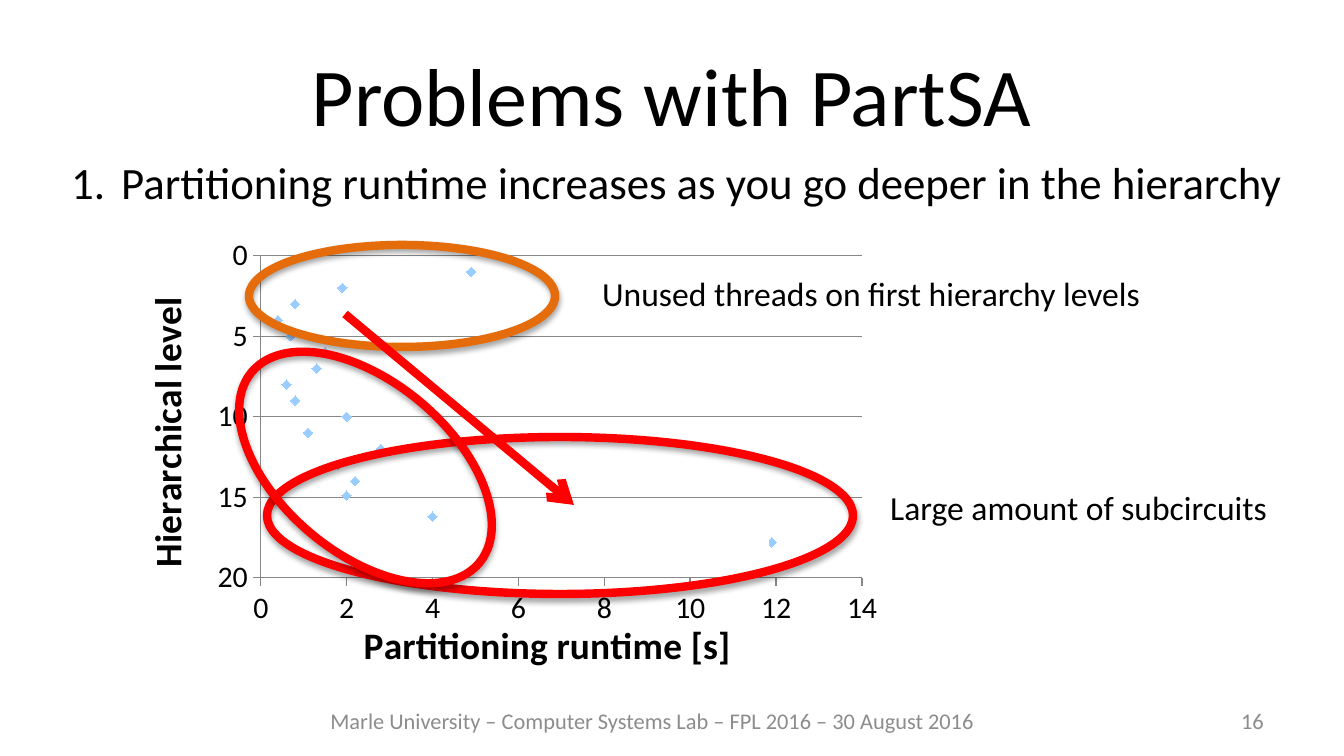
from lxml import etree
from pptx import Presentation
from pptx.chart.data import XyChartData
from pptx.dml.color import RGBColor
from pptx.enum.chart import XL_AXIS_CROSSES as Crosses, XL_CHART_TYPE as ChartType
from pptx.enum.chart import XL_MARKER_STYLE as Marker, XL_TICK_MARK as Tick
from pptx.enum.shapes import MSO_CONNECTOR as Connector, MSO_SHAPE as Shape
from pptx.enum.text import MSO_ANCHOR as Anchor, PP_ALIGN as Align
from pptx.oxml import parse_xml
from pptx.oxml.ns import nsdecls, qn
from pptx.util import Pt

SCALE = 914400 / 134.4  # EMU per px
COLORS = {"text": "000000", "muted": "8C8C8C", "white": "FFFFFF", "grid": "878787",
          "marker": "99CCFF", "orange": "E46C0A", "red": "FF0000"}
FONT = "Calibri"


def px(*lengths):
    return [round(length * SCALE) for length in lengths]


def rgb(name):
    return RGBColor.from_string(COLORS[name])


deck = Presentation()
deck.slide_width, deck.slide_height = px(1344, 756)
page = deck.slides.add_slide(deck.slide_layouts[6])

# Scatter chart: runtime against hierarchy level
runtimes = [4.9, 1.9, 0.8, 0.4, 0.7, 1.5, 1.3, 0.6, 0.8, 2, 1.1, 2.8, 1.8, 2.2, 2, 4, 6.7, 11.9]
levels = list(range(1, 15)) + [14.9, 16.2, 16.8, 17.8]
data = XyChartData()
points = data.add_series("Series 1")
for runtime, level in zip(runtimes, levels):
    points.add_data_point(runtime, level)
chart = page.shapes.add_chart(ChartType.XY_SCATTER, *px(129, 231, 766, 450), data).chart
chart.has_legend = chart.has_title = False
chart.font.name, chart.font.size = FONT, Pt(16)
chart.font.color.rgb = rgb("text")
chart.plots[0].vary_by_categories = False

series = chart.plots[0].series[0]
series.smooth = False
series.format.line.fill.background()
series.marker.style, series.marker.size = Marker.DIAMOND, 5
series.marker.format.fill.solid()
series.marker.format.fill.fore_color.rgb = rgb("marker")
series.marker.format.line.fill.background()

for axis, title, top, step in [(chart.category_axis, "Partitioning runtime [s]", 14, 2),
                               (chart.value_axis, "Hierarchical level", 20, 5)]:
    settings = {"minimum_scale": 0, "maximum_scale": top, "major_unit": step,
                "major_tick_mark": Tick.OUTSIDE, "minor_tick_mark": Tick.NONE}
    for name, value in settings.items():
        setattr(axis, name, value)
    axis.tick_labels.number_format = "General"
    axis.tick_labels.number_format_is_linked = False
    axis.format.line.color.rgb = rgb("grid")
    axis.format.line.width = Pt(0.75)
    frame = axis.axis_title.text_frame
    frame.text = title
    font = frame.paragraphs[0].runs[0].font
    font.name, font.size, font.bold = FONT, Pt(20), True
    font.color.rgb = rgb("text")
chart.category_axis.has_major_gridlines = False
value_axis = chart.value_axis
value_axis.reverse_order = True
value_axis.crosses = Crosses.MAXIMUM
value_axis.major_gridlines.format.line.color.rgb = rgb("grid")
value_axis.major_gridlines.format.line.width = Pt(0.75)
value_axis.axis_title.text_frame._txBody.find(qn("a:bodyPr")).set("rot", "-5400000")

# Fixed inner plot area
plot_area = chart._chartSpace.chart.plotArea
for old in plot_area.findall(qn("c:layout")):
    plot_area.remove(old)
layout = parse_xml(f'<c:layout {nsdecls("c")}><c:manualLayout/></c:layout>')
for tag, value in [("layoutTarget", "inner"), ("xMode", "edge"), ("yMode", "edge"),
                   ("x", "0.172"), ("y", "0.055"), ("w", "0.785"), ("h", "0.716")]:
    etree.SubElement(layout[0], qn(f"c:{tag}")).set("val", value)
plot_area.insert(0, layout)

# Ellipses and the white cover, back to front; labelled ellipses get a group
threads_group = page.shapes.add_group_shape()
circuits_group = page.shapes.add_group_shape()
for parent, kind, place, turn, color, width in [
        (threads_group, Shape.OVAL, (249, 245, 306, 102), 0, "orange", 4.5),
        (circuits_group, Shape.OVAL, (267, 437, 586, 157), 0, "red", 4.5),
        (page, Shape.RECTANGLE, (503, 505, 265, 54), 0, "white", 0.75),
        (page, Shape.OVAL, (280, 319, 171, 297), 310, "red", 4.5)]:
    shape = parent.shapes.add_shape(kind, *px(*place))
    shape.rotation = turn
    shape.shadow.inherit = False
    shape.line.color.rgb = rgb(color)
    shape.line.width = Pt(width)
    if kind == Shape.RECTANGLE:
        shape.fill.solid()
        shape.fill.fore_color.rgb = rgb("white")
        continue
    shape.fill.background()
    effects = shape._element.spPr.find(qn("a:effectLst"))
    effects.append(parse_xml(
        f'<a:outerShdw {nsdecls("a")} blurRad="{Pt(3.1)}" dist="{Pt(1.8)}" dir="5400000" '
        'rotWithShape="0"><a:srgbClr val="000000"><a:alpha val="35000"/></a:srgbClr></a:outerShdw>'))

# Texts
for parent, text, place, size, color, align, anchor in [
        (page, "Problems with PartSA", (67, 31, 1210, 126), 44, "text", Align.CENTER, Anchor.MIDDLE),
        (page, "16", (964, 701, 313, 40), 12, "muted", Align.RIGHT, Anchor.MIDDLE),
        (page, "Marle University – Computer Systems Lab – FPL 2016 – 30 August 2016",
         (246, 701, 813, 40), 12, "muted", Align.CENTER, Anchor.MIDDLE),
        (page, "Partitioning runtime increases as you go deeper in the hierarchy",
         (58, 148, 1248, 68), 24, "text", Align.LEFT, Anchor.TOP),
        (threads_group, "Unused threads on first hierarchy levels",
         (589, 266, 618, 54), 18, "text", Align.LEFT, Anchor.TOP),
        (circuits_group, "Large amount of subcircuits",
         (877, 480, 413, 54), 18, "text", Align.LEFT, Anchor.TOP)]:
    box = parent.shapes.add_textbox(*px(*place))
    frame = box.text_frame
    frame.word_wrap, frame.vertical_anchor = True, anchor
    para = frame.paragraphs[0]
    para.alignment = align
    span = para.add_run()
    span.text = text
    span.font.name, span.font.size = FONT, Pt(size)
    span.font.color.rgb = rgb(color)
    if parent is threads_group:
        box.fill.solid()
        box.fill.fore_color.rgb = rgb("white")
    if size == 24:  # numbered statement
        indent = px(50)[0]
        properties = para._p.get_or_add_pPr()
        properties.set("marL", str(indent))
        properties.set("indent", str(-indent))
        etree.SubElement(properties, qn("a:buFont")).set("typeface", "+mj-lt")
        etree.SubElement(properties, qn("a:buAutoNum")).set("type", "arabicPeriod")

# Trend arrow
arrow = page.shapes.add_connector(Connector.STRAIGHT, *px(345, 314, 574, 505))
arrow.line.color.rgb = rgb("red")
arrow.line.width = Pt(4.5)
etree.SubElement(arrow.line._get_or_add_ln(), qn("a:tailEnd")).set("type", "arrow")
etree.SubElement(arrow._element.spPr, qn("a:effectLst"))

deck.save("out.pptx")
